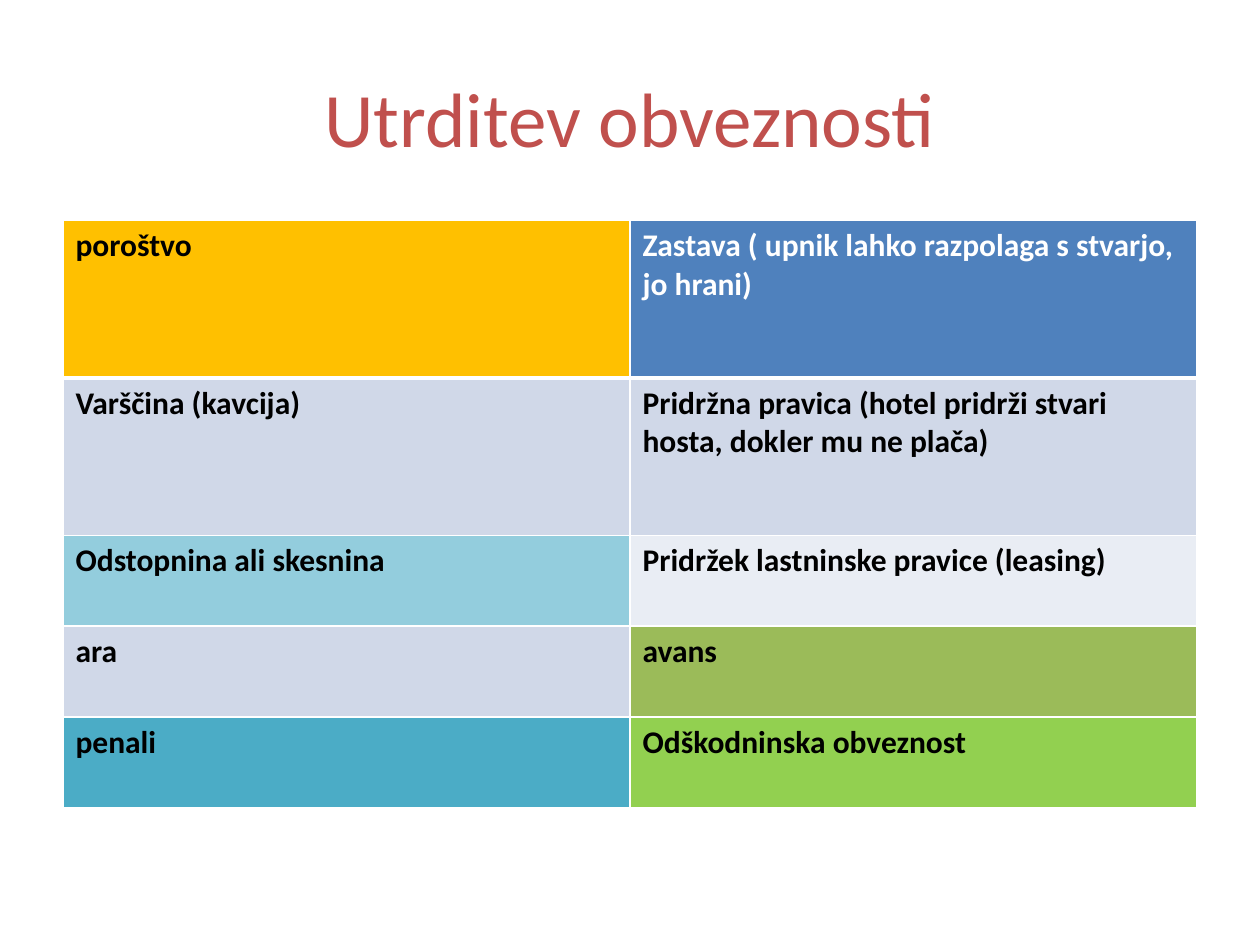
from lxml.etree import SubElement
from pptx import Presentation
from pptx.dml.color import RGBColor
from pptx.enum.text import MSO_ANCHOR, PP_ALIGN
from pptx.oxml.ns import qn
from pptx.util import Inches, Pt

BLACK = RGBColor(0, 0, 0)
WHITE = RGBColor(255, 255, 255)
RED = RGBColor(0xC0, 0x50, 0x4D)
GOLD = RGBColor(0xFF, 0xC0, 0x00)
BLUE = RGBColor(0x4F, 0x81, 0xBD)
BAND = RGBColor(0xD0, 0xD8, 0xE8)
PALE = RGBColor(0xE9, 0xED, 0xF4)
SKY = RGBColor(0x93, 0xCD, 0xDD)
OLIVE = RGBColor(0x9B, 0xBB, 0x59)
TEAL = RGBColor(0x4B, 0xAC, 0xC6)
GREEN = RGBColor(0x92, 0xD0, 0x50)

TITLE = "Utrditev obveznosti"
ROWS = [
    (1.25, [("poroštvo", GOLD, BLACK),
            ("Zastava ( upnik lahko razpolaga s stvarjo, jo hrani)", BLUE, WHITE)]),
    (1.25, [("Varščina (kavcija)", BAND, BLACK),
            ("Pridržna pravica (hotel pridrži stvari hosta, dokler mu ne plača)", BAND, BLACK)]),
    (0.72, [("Odstopnina ali skesnina", SKY, BLACK),
            ("Pridržek lastninske pravice (leasing)", PALE, BLACK)]),
    (0.72, [("ara", BAND, BLACK), ("avans", OLIVE, BLACK)]),
    (0.72, [("penali", TEAL, BLACK), ("Odškodninska obveznost", GREEN, BLACK)]),
]
MARGIN = 0.5
HEADER_LINE, GRID_LINE = 3, 1


def write(frame, text, size, color, bold=False, align=PP_ALIGN.LEFT):
    frame.word_wrap = True
    para = frame.paragraphs[0]
    para.alignment = align
    span = para.add_run()
    span.text = text
    span.font.name = "Calibri"
    span.font.size = Pt(size)
    span.font.bold = bold
    span.font.color.rgb = color


def set_borders(cell, top, bottom):
    properties = cell._tc.get_or_add_tcPr()
    widths = {"a:lnL": GRID_LINE, "a:lnR": GRID_LINE, "a:lnT": top, "a:lnB": bottom}
    for tag, width in widths.items():
        line = SubElement(properties, qn(tag), w=str(Pt(width)))
        fill = SubElement(line, qn("a:solidFill"))
        SubElement(fill, qn("a:srgbClr"), val=str(WHITE))


deck = Presentation()
deck.slide_width, deck.slide_height = Inches(10), Inches(7.5)
page = deck.slides.add_slide(deck.slide_layouts[6])
left, width = Inches(MARGIN), deck.slide_width - 2 * Inches(MARGIN)

title = page.shapes.add_textbox(left, Inches(0.3), width, Inches(1.25))
title.text_frame.vertical_anchor = MSO_ANCHOR.MIDDLE
write(title.text_frame, TITLE, 44, RED, align=PP_ALIGN.CENTER)

total_height = Inches(sum(height for height, cells in ROWS))
table = page.shapes.add_table(len(ROWS), 2, left, Inches(1.75), width, total_height).table
for row, (height, cells) in enumerate(ROWS):
    table.rows[row].height = Inches(height)
    for column, (text, fill, color) in enumerate(cells):
        cell = table.cell(row, column)
        set_borders(cell,
                    top=HEADER_LINE if row == 1 else GRID_LINE,
                    bottom=HEADER_LINE if row == 0 else GRID_LINE)
        cell.fill.solid()
        cell.fill.fore_color.rgb = fill
        write(cell.text_frame, text, 18, color, bold=True)

deck.save("out.pptx")
